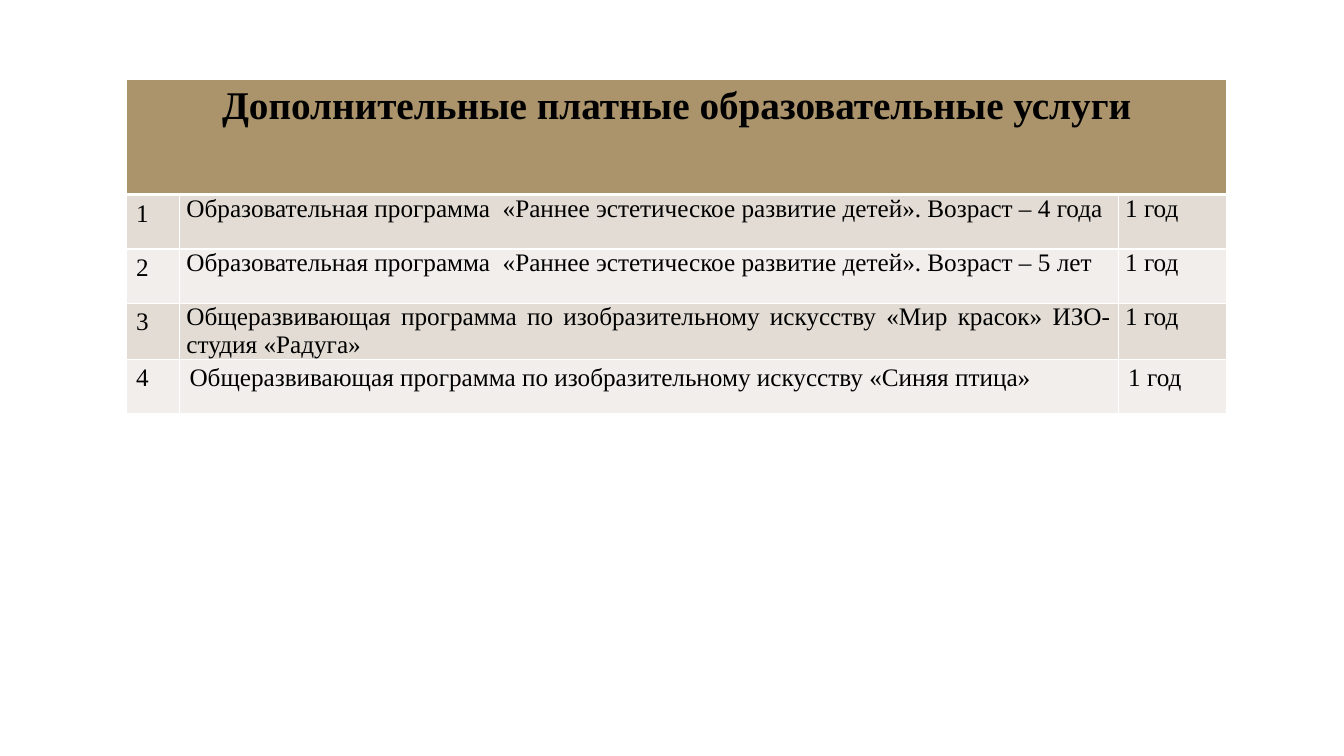
"""Build a slide with a table of paid educational services."""
from lxml.etree import SubElement
from pptx import Presentation
from pptx.dml.color import RGBColor
from pptx.enum.text import PP_ALIGN
from pptx.oxml.ns import qn
from pptx.util import Inches, Pt

FONT = "Times New Roman"
BLACK = RGBColor(0x00, 0x00, 0x00)
WHITE = RGBColor(0xFF, 0xFF, 0xFF)
GOLD = RGBColor(0xAB, 0x94, 0x6B)
BANDS = [RGBColor(0xE2, 0xDC, 0xD4), RGBColor(0xF1, 0xEE, 0xEB)]

TITLE = "Дополнительные платные образовательные услуги"
TERM = "1 год"
COURSES = [
    "Образовательная программа  «Раннее эстетическое развитие детей». Возраст – 4 года",
    "Образовательная программа  «Раннее эстетическое развитие детей». Возраст – 5 лет",
    "Общеразвивающая программа по изобразительному искусству «Мир красок» ИЗО-студия «Радуга»",
    "Общеразвивающая программа по изобразительному искусству «Синяя птица»",
]
WIDTHS = [0.53, 9.31, 1.08]
HEIGHTS = [1.14] + [0.54] * len(COURSES)


def add_borders(cell, top=1, bottom=1):
    props = cell._tc.get_or_add_tcPr()
    for side, width in (("L", 1), ("R", 1), ("T", top), ("B", bottom)):
        line = SubElement(props, qn(f"a:ln{side}"), w=str(Pt(width)))
        fill = SubElement(line, qn("a:solidFill"))
        SubElement(fill, qn("a:srgbClr"), val=str(WHITE))


def paint(cell, color, top=1, bottom=1):
    add_borders(cell, top, bottom)
    cell.fill.solid()
    cell.fill.fore_color.rgb = color


def write(cell, text, size=18, bold=False, align=PP_ALIGN.LEFT):
    para = cell.text_frame.paragraphs[0]
    para.alignment = align
    run = para.add_run()
    run.text = text
    run.font.name = FONT
    run.font.size = Pt(size)
    run.font.bold = bold
    run.font.color.rgb = BLACK


def tighten(cell):
    cell.margin_left = cell.margin_right = Inches(0.07)
    cell.margin_top = cell.margin_bottom = Inches(0)


def add_header(table):
    for cell in table.rows[0].cells:
        paint(cell, GOLD, bottom=3)
    head = table.cell(0, 0)
    head.merge(table.cell(0, len(WIDTHS) - 1))
    write(head, TITLE, 28, True, PP_ALIGN.CENTER)


def add_course(table, row, course):
    number, name, term = table.rows[row].cells
    for cell in (number, name, term):
        paint(cell, BANDS[(row - 1) % 2], top=3 if row == 1 else 1)
    last = row == len(COURSES)
    if not last:
        tighten(name)
        tighten(term)
    write(number, str(row))
    write(name, course, align=PP_ALIGN.LEFT if last else PP_ALIGN.JUSTIFY)
    write(term, TERM)


def add_grid(slide):
    frame = slide.shapes.add_table(
        len(HEIGHTS), len(WIDTHS), Inches(1.25), Inches(0.79),
        Inches(sum(WIDTHS)), Inches(sum(HEIGHTS)))
    table = frame.table
    for column, width in zip(table.columns, WIDTHS):
        column.width = Inches(width)
    for row, height in zip(table.rows, HEIGHTS):
        row.height = Inches(height)
    return table


def main():
    deck = Presentation()
    deck.slide_width = Inches(13.33)
    deck.slide_height = Inches(7.5)
    slide = deck.slides.add_slide(deck.slide_layouts[6])
    table = add_grid(slide)
    add_header(table)
    for row, course in enumerate(COURSES, 1):
        add_course(table, row, course)
    deck.save("out.pptx")


if __name__ == "__main__":
    main()
